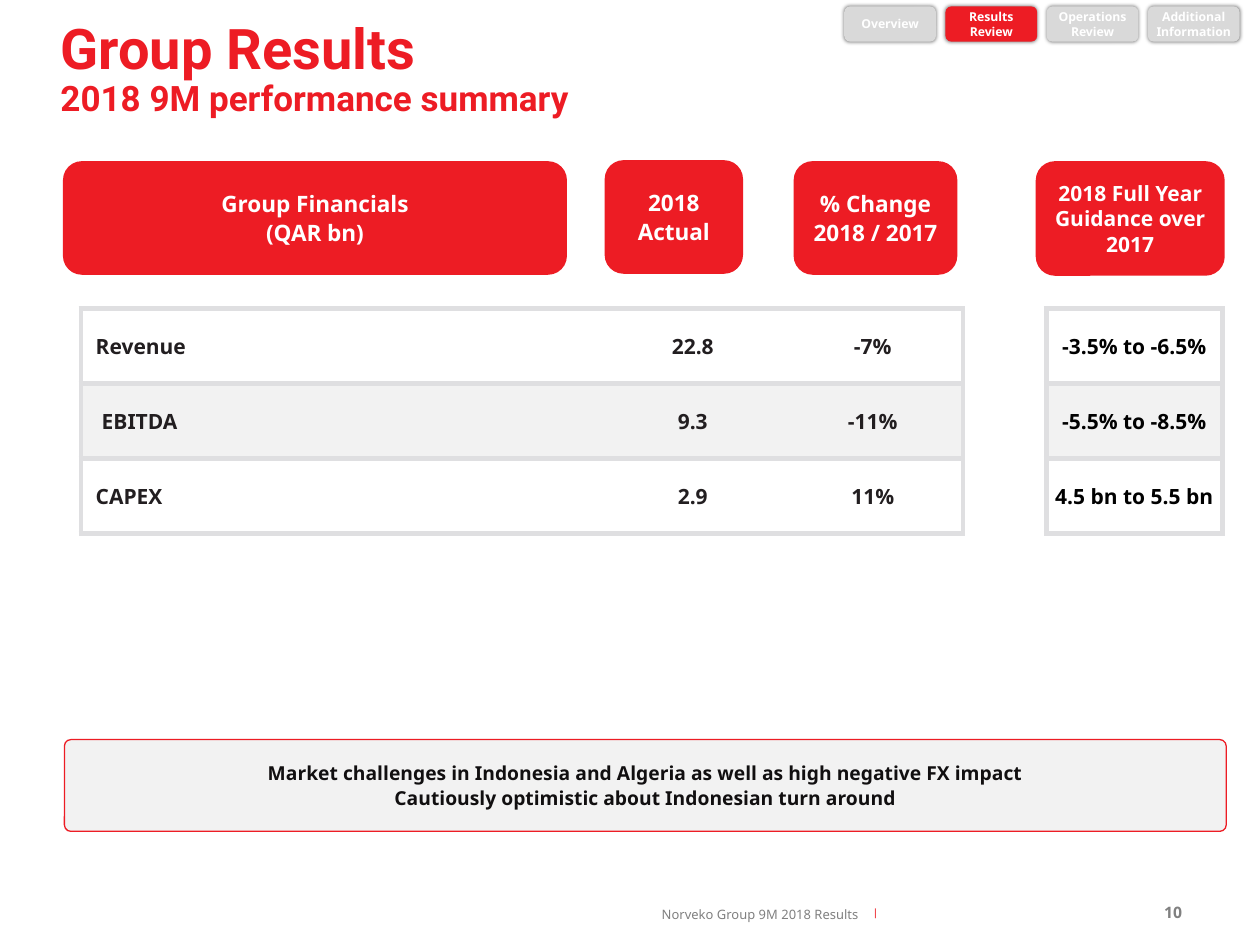
from lxml.etree import SubElement
from pptx import Presentation
from pptx.dml.color import RGBColor
from pptx.enum.shapes import MSO_SHAPE
from pptx.enum.text import MSO_ANCHOR, PP_ALIGN
from pptx.oxml.ns import qn
from pptx.util import Cm, Pt

ROUNDED = MSO_SHAPE.ROUNDED_RECTANGLE
MIDDLE, BOTTOM = MSO_ANCHOR.MIDDLE, MSO_ANCHOR.BOTTOM
LEFT, CENTER, RIGHT = PP_ALIGN.LEFT, PP_ALIGN.CENTER, PP_ALIGN.RIGHT
COLORS = {
    "red": "ED1C24", "white": "FFFFFF", "tab": "D9D9D9", "band": "F2F2F2",
    "grey": "808080", "border": "DFDFE1", "ink": "221E20", "note": "110F10",
    "black": "000000",
}


def rgb(name):
    return RGBColor.from_string(COLORS[name])


class SlideBuilder:
    """Holds the text style and the slide, and adds each kind of element."""

    def __init__(self, slide, font="Noto Sans"):
        self.slide = slide
        self.font = font

    def add_lines(self, tf, lines, size, color, bold=True, align=CENTER, font=None,
                  gap=0, spacing=None):
        sizes = size if isinstance(size, list) else [size] * len(lines)
        for i, (line, points) in enumerate(zip(lines, sizes)):
            p = tf.add_paragraph() if i else tf.paragraphs[0]
            p.alignment = align
            if i and gap:
                p.space_before = Pt(gap)
            if spacing:
                p.line_spacing = spacing
            r = p.add_run()
            r.text = line
            r.font.name = font or self.font
            r.font.size = Pt(points)
            r.font.bold = bold
            r.font.color.rgb = rgb(color)

    def frame(self, sp, anchor, margins):
        tf = sp.text_frame
        tf.word_wrap = True
        tf.vertical_anchor = anchor
        tf.margin_left = tf.margin_right = Cm(margins[0])
        tf.margin_top = tf.margin_bottom = Cm(margins[1])
        return tf

    def text(self, box, lines, size, color, anchor=MIDDLE, margins=(0.25, 0.13), **style):
        sp = self.slide.shapes.add_textbox(*map(Cm, box))
        self.add_lines(self.frame(sp, anchor, margins), lines, size, color, **style)

    def button(self, box, lines, size, fill="red", color="white", line=None,
               corner=None, shadow=False, margins=(0.25, 0.13), **style):
        sp = self.slide.shapes.add_shape(ROUNDED, *map(Cm, box))
        sp.fill.solid()
        sp.fill.fore_color.rgb = rgb(fill)
        if line:
            sp.line.color.rgb = rgb(line)
            sp.line.width = Pt(0.75)
        else:
            sp.line.fill.background()
        if corner:
            sp.adjustments[0] = corner
        sp.shadow.inherit = False
        if shadow:
            effects = sp._element.spPr.find(qn("a:effectLst"))
            outer = SubElement(effects, qn("a:outerShdw"), blurRad=str(Pt(2)),
                               dist="0", dir="0", algn="ctr", rotWithShape="0")
            SubElement(outer, qn("a:srgbClr"), val=COLORS["grey"])
        self.add_lines(self.frame(sp, MIDDLE, margins), lines, size, color, **style)

    def borders(self, cell, sides):
        tc_pr = cell._tc.get_or_add_tcPr()
        for side in "LRTB":
            ln = SubElement(tc_pr, qn(f"a:ln{side}"), w=str(Pt(3)))
            if side in sides:
                fill = SubElement(ln, qn("a:solidFill"))
                SubElement(fill, qn("a:srgbClr"), val=COLORS["border"])
            else:
                SubElement(ln, qn("a:noFill"))

    def table(self, left, top, widths, height, rows, edges, gap_col):
        frame = self.slide.shapes.add_table(
            len(rows), len(widths), Cm(left), Cm(top), Cm(sum(widths)), Cm(height * len(rows)))
        tbl = frame.table
        tbl.first_row = tbl.horz_banding = False
        for column, width in zip(tbl.columns, widths):
            column.width = Cm(width)
        for i, (indent, *values) in enumerate(rows):
            tbl.rows[i].height = Cm(height)
            for j, value in enumerate(values):
                cell = tbl.cell(i, j)
                self.borders(cell, edges[j])
                cell.fill.solid()
                cell.fill.fore_color.rgb = rgb("band" if i % 2 and j != gap_col else "white")
                cell.vertical_anchor = MIDDLE
                cell.margin_left = Cm(0.08 if j else indent)
                cell.margin_right = Cm(0.08)
                cell.margin_top = cell.margin_bottom = 0
                if value:
                    self.add_lines(cell.text_frame, [value], 12,
                                   "black" if j > gap_col else "ink",
                                   align=CENTER if j else LEFT)


def main():
    prs = Presentation()
    prs.slide_width, prs.slide_height = Cm(25.4), Cm(19.05)
    s = SlideBuilder(prs.slides.add_slide(prs.slide_layouts[6]))

    s.text((13.34, 18.06, 5.08, 0.66), ["Norveko Group 9M 2018 Results"], 7.4, "grey",
           anchor=BOTTOM, margins=(0, 0.13), bold=False, align=LEFT)
    s.text((17.32, 18.14, 0.66, 0.5), ["|"], 6, "red", bold=False, font="Arial")
    s.text((22.43, 17.88, 1.65, 1.02), ["10"], 9, "grey", align=RIGHT)

    s.text((0.97, 0, 23.44, 2.54), ["Group Results", "2018 9M performance summary"],
           [32, 20], "red", anchor=BOTTOM, align=LEFT, font="Roboto", spacing=0.9)

    tabs = [["Overview"], ["Results", "Review"], ["Operations", "Review"],
            ["Additional", "Information"]]
    for i, lines in enumerate(tabs):
        s.button((17.02 + 2.04 * i, 0.13, 1.85, 0.71), lines, 7,
                 fill="red" if lines[0] == "Results" else "tab",
                 shadow=True, margins=(0.1, 0.1))

    headings = [
        ((1.27, 3.25, 10.16, 2.29), ["Group Financials", "(QAR bn)"], 12.9),
        ((12.19, 3.23, 2.79, 2.29), ["2018", "Actual"], 12.9),
        ((16, 3.25, 3.3, 2.29), ["% Change", "2018 / 2017"], 12.9),
        ((20.88, 3.25, 3.81, 2.31), ["2018 Full Year Guidance over 2017"], 12),
    ]
    for box, lines, size in headings:
        s.button(box, lines, size, gap=1)

    s.table(1.63, 6.22, [10.52, 3.63, 3.63, 1.68, 3.55], 1.51, [
        (0.3, "Revenue", "22.8", "-7%", "", "-3.5% to -6.5%"),
        (0.42, "EBITDA", "9.3", "-11%", "", "-5.5% to -8.5%"),
        (0.3, "CAPEX", "2.9", "11%", "", "4.5 bn to 5.5 bn"),
    ], edges=["LTB", "TB", "RTB", "LR", "LRTB"], gap_col=3)

    s.button((1.3, 14.91, 23.42, 1.85),
             ["Market challenges in Indonesia and Algeria as well as high negative FX impact",
              "Cautiously optimistic about Indonesian turn around"],
             11, fill="band", color="note", line="red", corner=0.07, margins=(0, 0), gap=1)

    prs.save("out.pptx")


if __name__ == "__main__":
    main()
